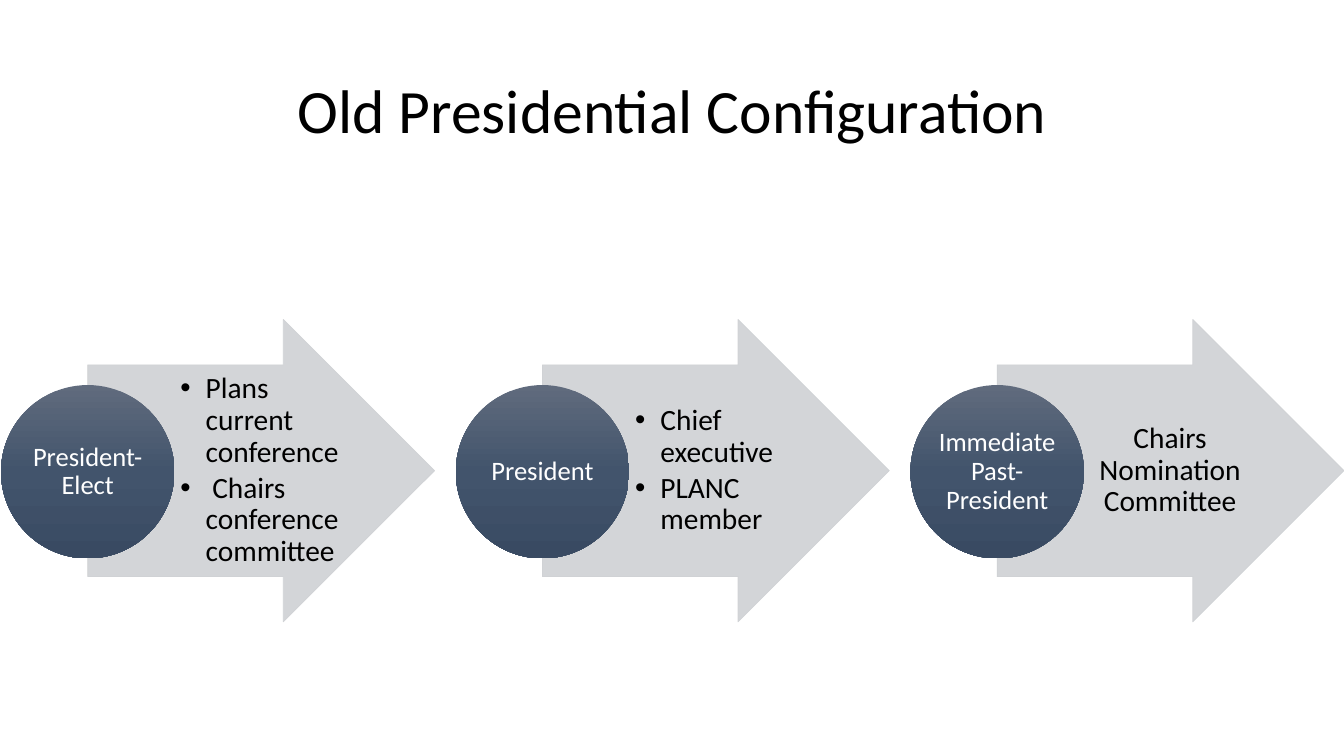
import pptx
import pptx.dml.color
import pptx.enum.shapes
import pptx.enum.text
import pptx.oxml
import pptx.oxml.ns
import pptx.util
from pptx.util import Inches

FONT = "Calibri"
ARROW_COLOR = "CFD1D4"
CIRCLE_STOPS = [(0, "606B7D"), (50, "42546C"), (100, "394A62")]
STAGE_LEFT, STAGE_PITCH = 0.01, 4.51
STAGES = [
    ("President-Elect", ["Plans current conference", " Chairs conference committee"]),
    ("President", ["Chief executive", "PLANC member"]),
    ("Immediate Past-President", ["Chairs Nomination Committee"]),
]


def rgb(value):
    """Turn a hex string into a colour."""
    return pptx.dml.color.RGBColor.from_string(value)


def xml(tag, content="", attrs=""):
    """Build one DrawingML element."""
    ns = pptx.oxml.ns.nsdecls("a")
    return pptx.oxml.parse_xml(f"<a:{tag} {ns} {attrs}>{content}</a:{tag}>")


def set_text(sp, paragraphs, size, color="000000", bullets=False, after=0, insets=None):
    """Fill a shape with formatted paragraphs, vertically centred."""
    tf = sp.text_frame
    tf.word_wrap = True
    tf.auto_size = pptx.enum.text.MSO_AUTO_SIZE.NONE
    tf.vertical_anchor = pptx.enum.text.MSO_ANCHOR.MIDDLE
    if insets:
        tf.margin_left, tf.margin_top, tf.margin_right, tf.margin_bottom = map(Inches, insets)
    align = pptx.enum.text.PP_ALIGN.LEFT if bullets else pptx.enum.text.PP_ALIGN.CENTER
    for i, text in enumerate(paragraphs):
        p = tf.add_paragraph() if i else tf.paragraphs[0]
        p.alignment = align
        p.line_spacing = 0.9
        p.space_after = pptx.util.Pt(after)
        r = p.add_run()
        r.text = text
        r.font.name = FONT
        r.font.size = pptx.util.Pt(size)
        r.font.color.rgb = rgb(color)
        if bullets:
            pPr = p._p.get_or_add_pPr()
            pPr.set("marL", str(Inches(0.25)))
            pPr.set("indent", str(Inches(-0.25)))
            pPr.append(xml("buFont", attrs='typeface="Arial"'))
            pPr.append(xml("buChar", attrs='char="•"'))


def add_arrow(shapes, left, top, width, height):
    """Add a slightly transparent block arrow."""
    sp = shapes.add_shape(pptx.enum.shapes.MSO_SHAPE.RIGHT_ARROW,
                          Inches(left), Inches(top), Inches(width), Inches(height))
    sp.shadow.inherit = False
    sp.adjustments[0], sp.adjustments[1] = 0.7, 0.5
    sp.fill.solid()
    sp.fill.fore_color.rgb = rgb(ARROW_COLOR)
    sp.line.color.rgb = rgb(ARROW_COLOR)
    sp.line.width = pptx.util.Pt(0.5)
    for clr in sp._element.spPr.iter(pptx.oxml.ns.qn("a:srgbClr")):
        clr.append(xml("alpha", attrs='val="90000"'))


def add_circle(shapes, left, top, size):
    """Add a circle with a vertical gradient."""
    sp = shapes.add_shape(pptx.enum.shapes.MSO_SHAPE.OVAL,
                          Inches(left), Inches(top), Inches(size), Inches(size))
    sp.shadow.inherit = False
    sp.line.fill.background()
    stops = "".join(f'<a:gs pos="{pos * 1000}"><a:srgbClr val="{color}"/></a:gs>'
                    for pos, color in CIRCLE_STOPS)
    gradient = xml("gradFill", f'<a:gsLst>{stops}</a:gsLst><a:lin ang="5400000" scaled="0"/>')
    sp._element.spPr.find(pptx.oxml.ns.qn("a:prstGeom")).addnext(gradient)


def add_text(shapes, left, top, width, height, paragraphs, **fmt):
    """Add a text box."""
    sp = shapes.add_textbox(Inches(left), Inches(top), Inches(width), Inches(height))
    set_text(sp, paragraphs, **fmt)


def add_stage(shapes, left, role, duties):
    """Add one office: arrow, duties, circle and role."""
    bullets = len(duties) > 1
    add_arrow(shapes, left + 0.86, 3.17, 3.44, 3)
    add_text(shapes, left + 1.72, 3.62, 1.68, 2.1, duties, size=21, bullets=bullets,
             after=3 if bullets else 0, insets=(0.06, 0.01, 0.03, 0.01))
    add_circle(shapes, left, 3.82, 1.72)
    add_text(shapes, left + 0.25, 4.07, 1.22, 1.22, [role], size=19, color="FFFFFF",
             insets=(0.01, 0.01, 0.01, 0.01))


def main():
    """Build and save the slide."""
    prs = pptx.Presentation()
    prs.slide_width, prs.slide_height = Inches(13.33), Inches(7.5)
    s = prs.slides.add_slide(prs.slide_layouts[5])
    title = s.shapes.title
    title.left, title.top = Inches(0.92), Inches(0.4)
    title.width, title.height = Inches(11.5), Inches(1.45)
    set_text(title, ["Old Presidential Configuration"], size=44)
    group = s.shapes.add_group_shape()
    for i, (role, duties) in enumerate(STAGES):
        add_stage(group.shapes, STAGE_LEFT + i * STAGE_PITCH, role, duties)
    prs.save("out.pptx")


if __name__ == "__main__":
    main()
